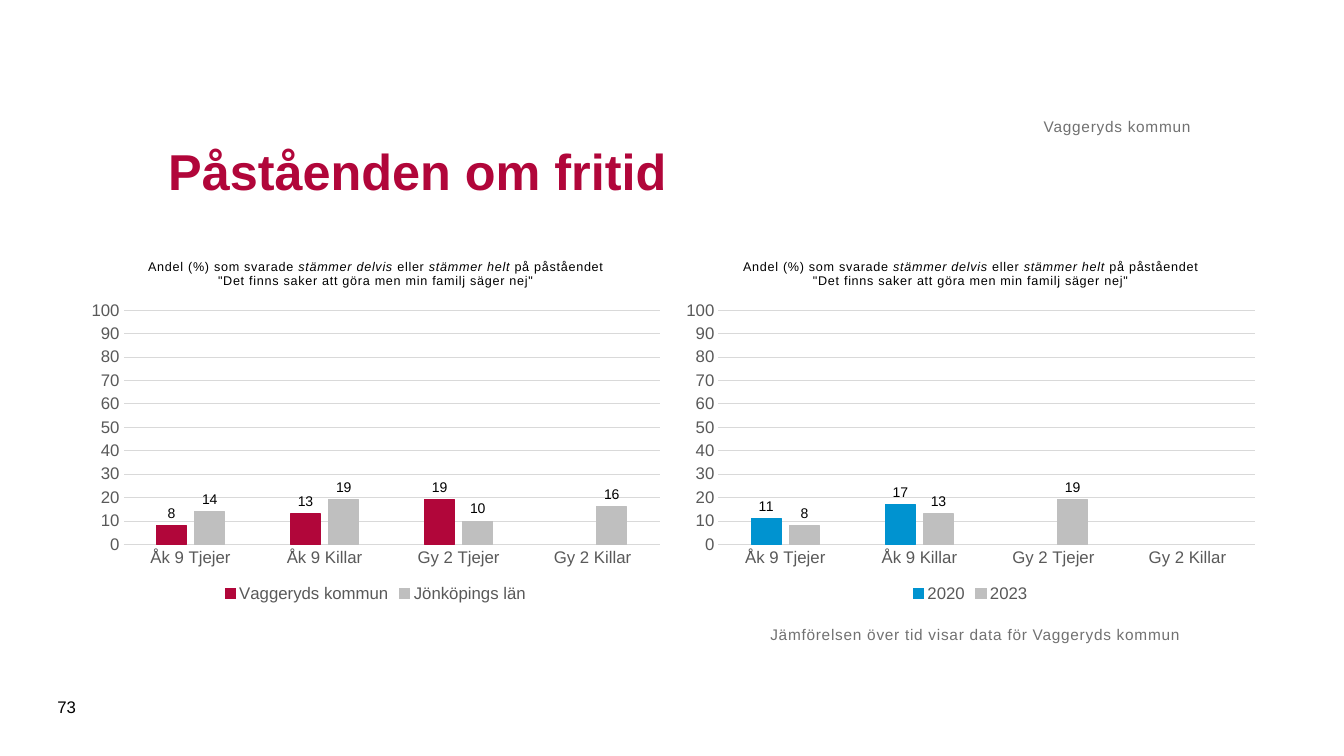
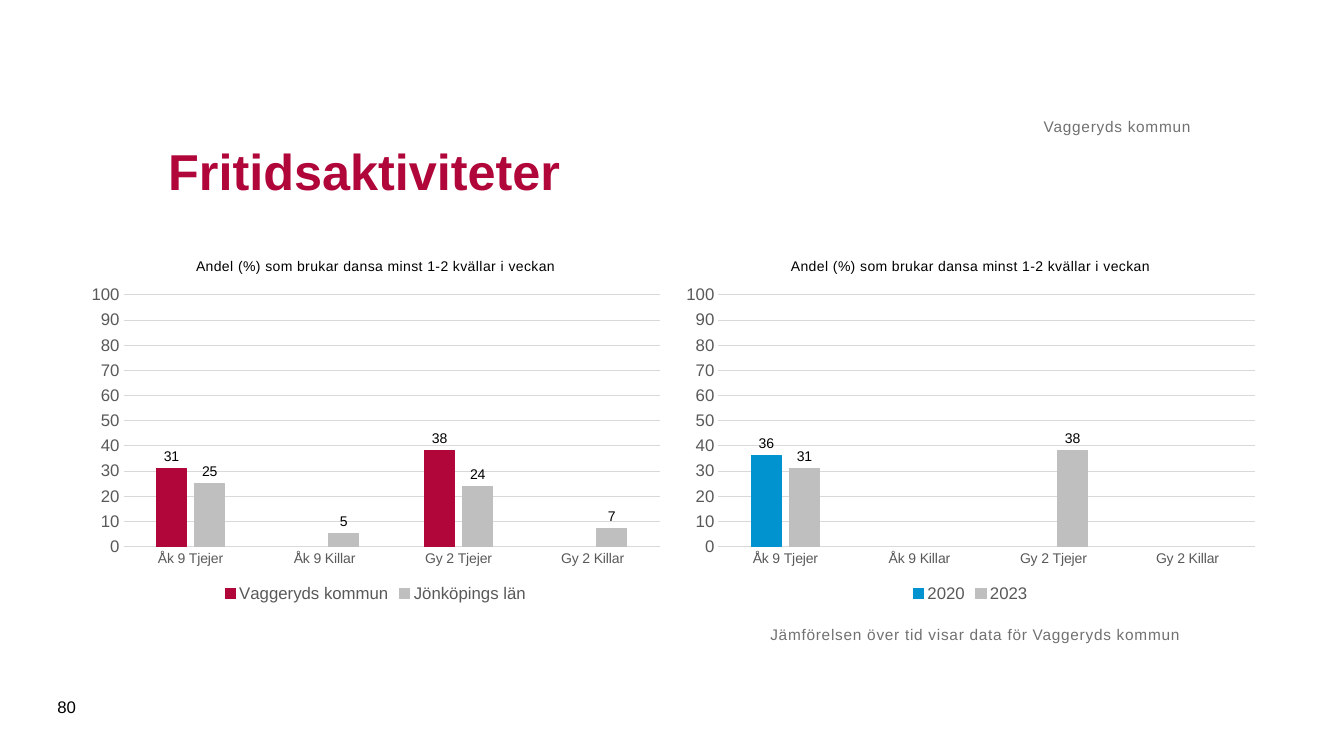
from dataclasses import dataclass
from typing import Any, Optional

import pptx
import pptx.chart.data
import pptx.dml.color
import pptx.enum.chart
import pptx.enum.text
import pptx.util

PX = 9144
FONT = "Arial"
CRIMSON, BLUE, SILVER = "B1063A", "0093D0", "BFBFBF"
BLACK, AXIS_GRAY, NOTE_GRAY, GRID_GRAY = "000000", "595959", "717171", "D9D9D9"
NUMBER_FORMAT = "#,##0;#,##0"
CATEGORIES = ("Åk 9 Tjejer", "Åk 9 Killar", "Gy 2 Tjejer", "Gy 2 Killar")
MUNICIPALITY = "Vaggeryds kommun"
ANCHOR = pptx.enum.text.MSO_ANCHOR
ALIGN = pptx.enum.text.PP_ALIGN

Values = tuple[Optional[int], ...]


@dataclass(frozen=True)
class Box:
    x: int
    y: int
    w: int
    h: int

    def emu(self) -> tuple[int, ...]:
        return tuple(v * PX for v in (self.x, self.y, self.w, self.h))


@dataclass(frozen=True)
class TextStyle:
    box: Box
    size: int
    color: str
    bold: bool = False
    spacing: float = 0
    inset: bool = True
    anchor: Any = ANCHOR.MIDDLE
    align: Any = ALIGN.LEFT


@dataclass(frozen=True)
class Panel:
    box: Box
    names: tuple[str, str]
    colors: tuple[str, str]


@dataclass(frozen=True)
class Run:
    text: str
    italic: bool = False


@dataclass(frozen=True)
class Page:
    title: str
    number: str
    question: tuple[tuple[Run, ...], ...]
    question_size: int
    question_spacing: float
    category_size: int
    values: tuple[tuple[Values, Values], ...]


TITLE = TextStyle(Box(157, 98, 1024, 142), 36, CRIMSON, bold=True)
PLACE = TextStyle(Box(157, 62, 1024, 73), 11, NOTE_GRAY, spacing=0.5,
                  inset=False, anchor=ANCHOR.BOTTOM, align=ALIGN.RIGHT)
NOTE = TextStyle(Box(764, 620, 531, 94), 11, NOTE_GRAY, spacing=0.5,
                 inset=False, anchor=ANCHOR.TOP)
NUMBER = TextStyle(Box(47, 681, 57, 40), 12, BLACK)

PANELS = (
    Panel(Box(79, 240, 587, 362), (MUNICIPALITY, "Jönköpings län"), (CRIMSON, SILVER)),
    Panel(Box(669, 240, 587, 362), ("2020", "2023"), (BLUE, SILVER)),
)

PAGES = (
    Page(
        "Påståenden om fritid", "73",
        (
            (Run("Andel (%) som svarade "), Run("stämmer delvis", True), Run(" eller "),
             Run("stämmer helt", True), Run(" på påståendet")),
            (Run('"Det finns saker att göra men min familj säger nej"'),),
        ),
        9, 0.5, 12,
        (
            ((8, 13, 19, None), (14, 19, 10, 16)),
            ((11, 17, None, None), (8, 13, 19, None)),
        ),
    ),
    Page(
        "Fritidsaktiviteter", "80",
        ((Run("Andel (%) som brukar dansa minst 1-2 kvällar i veckan"),),),
        10, 0.4, 10,
        (
            ((31, None, 38, None), (25, 5, 24, 7)),
            ((36, None, None, None), (31, None, 38, None)),
        ),
    ),
)


def rgb(color: str) -> pptx.dml.color.RGBColor:
    return pptx.dml.color.RGBColor.from_string(color)


def apply(target: Any, values: dict[str, Any]) -> None:
    for name, value in values.items():
        setattr(target, name, value)


def set_font(font: Any, size: int, color: str, bold: bool = False, italic: bool = False) -> None:
    apply(font, {"name": FONT, "size": pptx.util.Pt(size), "bold": bold, "italic": italic})
    font.color.rgb = rgb(color)


def set_line(line: Any, color: str) -> None:
    line.color.rgb = rgb(color)
    line.width = pptx.util.Pt(0.75)


def add_run(p: Any, text: str, spacing: float) -> Any:
    r = p.add_run()
    r.text = text
    if spacing:
        r.font._element.set("spc", str(round(spacing * 100)))
    return r


def add_text(s: Any, text: str, style: TextStyle) -> None:
    tf = s.shapes.add_textbox(*style.box.emu()).text_frame
    apply(tf, {"word_wrap": True, "vertical_anchor": style.anchor})
    if not style.inset:
        apply(tf, dict.fromkeys(
            ("margin_left", "margin_top", "margin_right", "margin_bottom"), 0))
    p = tf.paragraphs[0]
    p.alignment = style.align
    r = add_run(p, text, style.spacing)
    set_font(r.font, style.size, style.color, style.bold)


def add_question(chart: Any, page: Page) -> None:
    chart.has_title = True
    chart.chart_title.include_in_layout = False
    tf = chart.chart_title.text_frame
    for i, runs in enumerate(page.question):
        p = tf.add_paragraph() if i else tf.paragraphs[0]
        set_font(p.font, page.question_size, BLACK)
        for run in runs:
            r = add_run(p, run.text, page.question_spacing)
            set_font(r.font, page.question_size, BLACK, italic=run.italic)


def format_axes(chart: Any, category_size: int) -> None:
    no_tick = pptx.enum.chart.XL_TICK_MARK.NONE
    for axis, size in ((chart.category_axis, category_size), (chart.value_axis, 12)):
        apply(axis, {"major_tick_mark": no_tick, "minor_tick_mark": no_tick})
        set_font(axis.tick_labels.font, size, AXIS_GRAY)
    set_line(chart.category_axis.format.line, GRID_GRAY)
    axis = chart.value_axis
    apply(axis, {"minimum_scale": 0, "maximum_scale": 100, "major_unit": 10,
                 "has_major_gridlines": True})
    apply(axis.tick_labels, {"number_format": NUMBER_FORMAT, "number_format_is_linked": False})
    axis.format.line.fill.background()
    set_line(axis.major_gridlines.format.line, GRID_GRAY)


def format_series(series: Any, color: str) -> None:
    series.format.fill.solid()
    series.format.fill.fore_color.rgb = rgb(color)
    set_line(series.format.line, color)
    series.invert_if_negative = False
    labels = series.data_labels
    apply(labels, {
        "show_value": True,
        "position": pptx.enum.chart.XL_LABEL_POSITION.OUTSIDE_END,
        "number_format": NUMBER_FORMAT,
        "number_format_is_linked": False,
    })
    set_font(labels.font, 10, BLACK)


def add_panel(s: Any, panel: Panel, page: Page, values: tuple[Values, Values]) -> None:
    data = pptx.chart.data.CategoryChartData()
    data.categories = CATEGORIES
    for name, row in zip(panel.names, values):
        data.add_series(name, row)
    chart = s.shapes.add_chart(
        pptx.enum.chart.XL_CHART_TYPE.COLUMN_CLUSTERED, *panel.box.emu(), data).chart
    set_font(chart.font, 10, BLACK)
    add_question(chart, page)
    format_axes(chart, page.category_size)
    chart.has_legend = True
    apply(chart.legend, {"position": pptx.enum.chart.XL_LEGEND_POSITION.BOTTOM,
                         "include_in_layout": False})
    set_font(chart.legend.font, 12, AXIS_GRAY)
    plot = chart.plots[0]
    apply(plot, {"gap_width": 219, "overlap": -27, "vary_by_categories": False})
    for series, color in zip(plot.series, panel.colors):
        format_series(series, color)


def add_page(prs: Any, page: Page) -> None:
    s = prs.slides.add_slide(prs.slide_layouts[6])
    for panel, values in zip(PANELS, page.values):
        add_panel(s, panel, page, values)
    add_text(s, page.title, TITLE)
    add_text(s, f"Jämförelsen över tid visar data för {MUNICIPALITY}", NOTE)
    add_text(s, MUNICIPALITY, PLACE)
    add_text(s, page.number, NUMBER)


def main() -> None:
    prs = pptx.Presentation()
    apply(prs, {"slide_width": 1333 * PX, "slide_height": 750 * PX})
    for page in PAGES:
        add_page(prs, page)
    prs.save("out.pptx")


if __name__ == "__main__":
    main()
